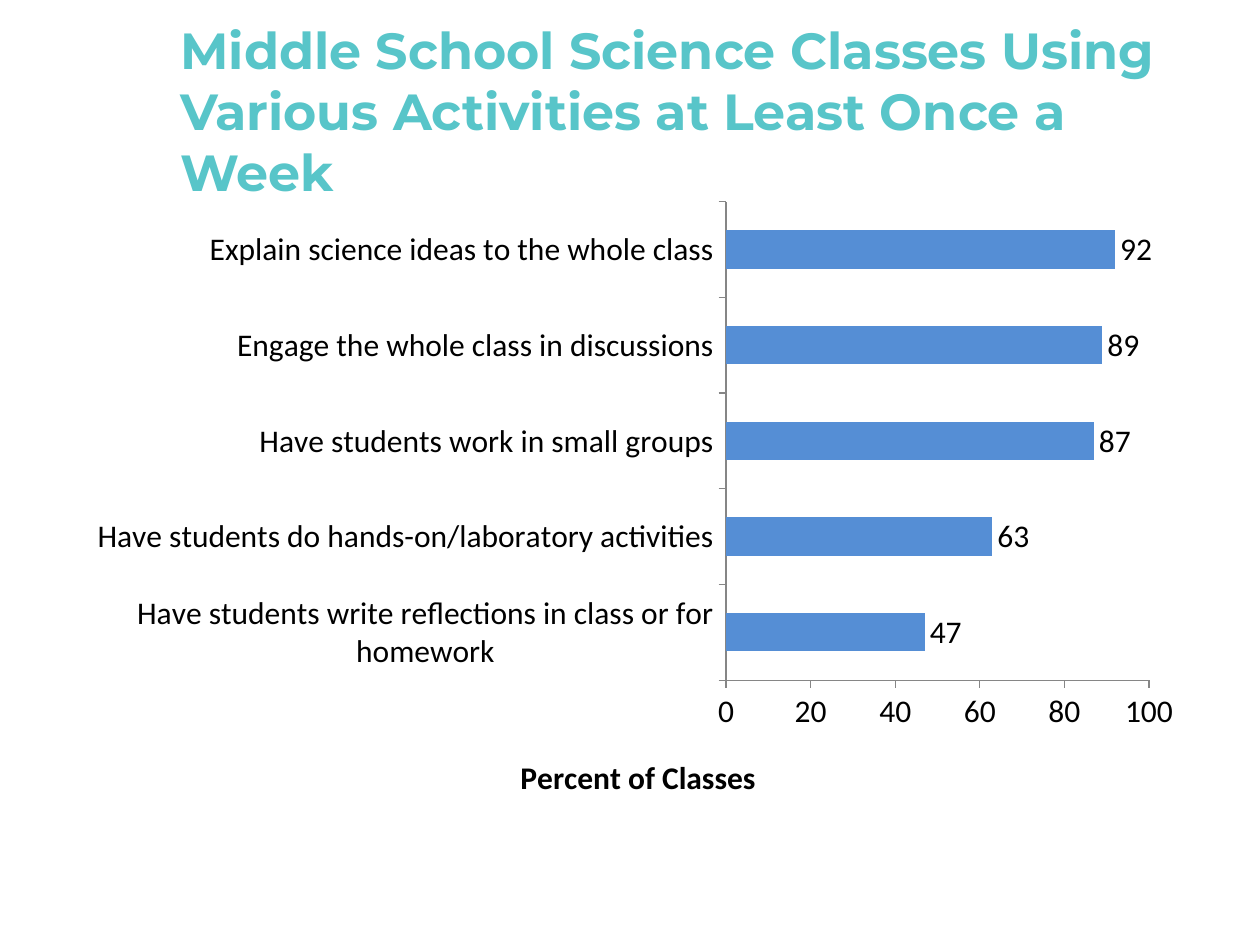
from lxml import etree
from pptx import Presentation
from pptx.chart.data import CategoryChartData
from pptx.dml.color import RGBColor
from pptx.enum.chart import XL_CHART_TYPE, XL_LABEL_POSITION, XL_TICK_MARK
from pptx.enum.text import MSO_ANCHOR, MSO_AUTO_SIZE, PP_ALIGN
from pptx.oxml import parse_xml
from pptx.oxml.ns import nsdecls
from pptx.util import Cm, Pt

BAR_CLUSTERED = XL_CHART_TYPE.BAR_CLUSTERED
OUTSIDE_END = XL_LABEL_POSITION.OUTSIDE_END
TICK_OUT, TICK_NONE = XL_TICK_MARK.OUTSIDE, XL_TICK_MARK.NONE
MIDDLE, LEFT, NO_AUTOFIT = MSO_ANCHOR.MIDDLE, PP_ALIGN.LEFT, MSO_AUTO_SIZE.NONE

COLORS = {"title": "58C5C9", "bar": "558ED5", "text": "000000", "axis": "868686"}
ACTIVITIES = {
    "Have students write reflections in class or for homework": 47,
    "Have students do hands-on/laboratory activities": 63,
    "Have students work in small groups": 87,
    "Engage the whole class in discussions": 89,
    "Explain science ideas to the whole class": 92,
}


def format_font(font, color, **values):
    for name, value in values.items():
        setattr(font, name, value)
    font.color.rgb = RGBColor.from_string(COLORS[color])


def manual_layout(**values):
    """Return a chart layout, with places as fractions of the chart."""
    layout = parse_xml(f"<c:layout {nsdecls('c')}><c:manualLayout/></c:layout>")
    namespace = etree.QName(layout).namespace
    for name, value in values.items():
        etree.SubElement(layout[0], f"{{{namespace}}}{name}").set("val", str(value))
    return layout


presentation = Presentation()
presentation.slide_width, presentation.slide_height = Cm(25.4), Cm(19.05)
slide = presentation.slides.add_slide(presentation.slide_layouts[5])

# Title
title = slide.shapes.title
title.left, title.top, title.width, title.height = Cm(3.38), Cm(0.64), Cm(20.75), Cm(3.18)
frame = title.text_frame
frame.text = "Middle School Science Classes Using Various Activities at Least Once a Week"
frame_format = {"word_wrap": True, "auto_size": NO_AUTOFIT, "vertical_anchor": MIDDLE}
for name, value in frame_format.items():
    setattr(frame, name, value)
paragraph = frame.paragraphs[0]
paragraph.alignment = LEFT
format_font(paragraph.runs[0].font, "title", name="Montserrat", size=Pt(29), bold=True)

# Bar chart
chart_data = CategoryChartData()
chart_data.categories = list(ACTIVITIES)
chart_data.add_series("Series 1", list(ACTIVITIES.values()))
chart = slide.shapes.add_chart(
    BAR_CLUSTERED, Cm(1.63), Cm(3.81), Cm(22.43), Cm(12.7), chart_data
).chart
chart.has_legend = False
chart.has_title = False
format_font(chart.font, "text", name="Calibri", size=Pt(18))

plot = chart.plots[0]
plot.gap_width = 150
plot.vary_by_categories = False
bar_fill = plot.series[0].format.fill
bar_fill.solid()
bar_fill.fore_color.rgb = RGBColor.from_string(COLORS["bar"])

# Value labels
plot.has_data_labels = True
labels = plot.data_labels
labels.show_value = True
labels.position = OUTSIDE_END
format_font(labels.font, "text", name="Calibri", size=Pt(18))

# Axes
value_axis = chart.value_axis
scale = {"minimum_scale": 0, "maximum_scale": 100, "major_unit": 20}
for name, value in scale.items():
    setattr(value_axis, name, value)
for axis in (chart.category_axis, value_axis):
    axis.has_major_gridlines = False
    axis.major_tick_mark = TICK_OUT
    axis.minor_tick_mark = TICK_NONE
    axis.format.line.width = Pt(0.75)
    axis.format.line.color.rgb = RGBColor.from_string(COLORS["axis"])
    format_font(axis.tick_labels.font, "text", name="Calibri", size=Pt(18))

# Axis title
axis_title = value_axis.axis_title
axis_title.text_frame.text = "Percent of Classes"
run = axis_title.text_frame.paragraphs[0].runs[0]
format_font(run.font, "text", name="Calibri", size=Pt(18), bold=True)

# Places of the plot area and the axis title
plot_area = chart.element.chart.plotArea
title_element = value_axis.axis_title.element if hasattr(axis_title, "element") else None
if title_element is None:
    title_element = plot_area.find(".//{*}valAx/{*}title")
placements = (
    (plot_area, 0, manual_layout(layoutTarget="inner", xMode="edge", yMode="edge",
                                 x=0.58, y=0.02, w=0.38, h=0.76)),
    (title_element, 1, manual_layout(xMode="edge", yMode="edge", x=0.39, y=0.89)),
)
for parent, index, layout in placements:
    for old_layout in parent.findall("{*}layout"):
        parent.remove(old_layout)
    parent.insert(index, layout)

presentation.save("out.pptx")
